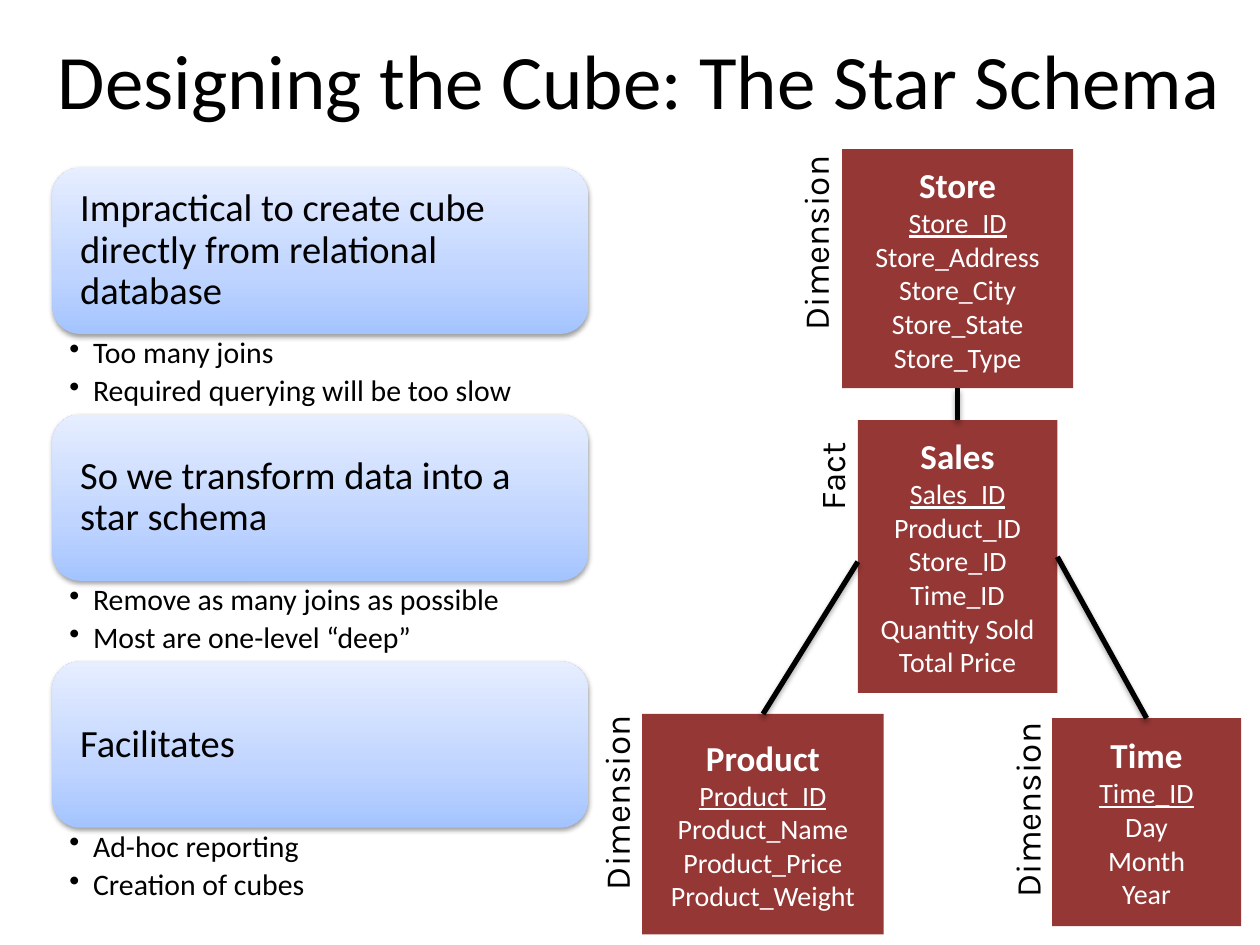
from lxml import etree
from pptx import Presentation
from pptx.dml.color import RGBColor
from pptx.enum.shapes import MSO_CONNECTOR, MSO_SHAPE
from pptx.enum.text import MSO_ANCHOR, PP_ALIGN
from pptx.oxml import parse_xml
from pptx.oxml.ns import nsdecls, qn
from pptx.util import Pt

CENTER, LEFT, RIGHT = PP_ALIGN.CENTER, PP_ALIGN.LEFT, PP_ALIGN.RIGHT
MIDDLE, TOP = MSO_ANCHOR.MIDDLE, MSO_ANCHOR.TOP
RECT, ROUND = MSO_SHAPE.RECTANGLE, MSO_SHAPE.ROUNDED_RECTANGLE
STRAIGHT = MSO_CONNECTOR.STRAIGHT


def rgb(value):
    return RGBColor.from_string(value)


def write(tf, lines, align, anchor, margins, spacing=1, bullet=False):
    tf.word_wrap = True
    tf.vertical_anchor = anchor
    for side, margin in zip(("left", "top", "right", "bottom"), margins):
        setattr(tf, f"margin_{side}", Pt(margin))
    for i, (text, color, fmt) in enumerate(lines):
        p = tf.paragraphs[0] if i == 0 else tf.add_paragraph()
        p.alignment = align
        p.line_spacing = spacing
        if bullet:
            p.space_after = Pt(3.4)
            pPr = p._p.get_or_add_pPr()
            pPr.set("marL", str(Pt(13.5)))
            pPr.set("indent", str(-Pt(13.5)))
            etree.SubElement(pPr, qn("a:buChar")).set("char", "•")
        r = p.add_run()
        r.text = text
        r.font.color.rgb = rgb(color)
        for name, value in fmt.items():
            setattr(r.font, name, value)


TITLE = {"name": "Calibri", "size": Pt(44)}
HEADING = {"name": "Calibri", "size": Pt(22)}
BULLET = {"name": "Calibri", "size": Pt(17)}
TABLE = {"name": "Calibri", "size": Pt(20), "bold": True}
FIELD = {"name": "Calibri", "size": Pt(16)}
KEY = {**FIELD, "underline": True}
LABEL = {"name": "Karla", "size": Pt(20)}
INSETS = (7.2, 3.6, 7.2, 3.6)

prs = Presentation()
prs.slide_width, prs.slide_height = Pt(720), Pt(540)
slide = prs.slides.add_slide(prs.slide_layouts[5])
shadows = []

title = slide.shapes.title
title.left, title.top, title.width, title.height = Pt(23), Pt(0), Pt(685), Pt(90)
write(title.text_frame, [("Designing the Cube: The Star Schema", "000000", TITLE)],
      CENTER, MIDDLE, INSETS)

points = [
    ("Impractical to create cube directly from relational database",
     ["Too many joins", "Required querying will be too slow"]),
    ("So we transform data into a star schema",
     ["Remove as many joins as possible", "Most are one-level “deep”"]),
    ("Facilitates", ["Ad-hoc reporting", "Creation of cubes"]),
]
stops = "".join(
    f'<a:gs pos="{pos}"><a:srgbClr val="{color}"/></a:gs>'
    for pos, color in [(0, "A4C4FF"), (35000, "BFD4FF"), (100000, "E6EEFF")])
for i, (heading, bullets) in enumerate(points):
    top = 95.8 + 141.1 * i
    s = slide.shapes.add_shape(ROUND, Pt(30), Pt(top), Pt(306), Pt(95))
    s.fill.gradient()
    s.fill.gradient_angle = 90
    grad = s._element.spPr.find(qn("a:gradFill"))
    grad.replace(grad.find(qn("a:gsLst")),
                 parse_xml(f'<a:gsLst {nsdecls("a")}>{stops}</a:gsLst>'))
    s.line.fill.background()
    write(s.text_frame, [(heading, "000000", HEADING)], LEFT, MIDDLE, (11.2,) * 4, 0.9)
    shadows.append((s, 1.6, 38))
    s = slide.shapes.add_textbox(Pt(30), Pt(top + 95), Pt(306), Pt(45.5))
    write(s.text_frame, [(b, "000000", BULLET) for b in bullets],
          LEFT, TOP, (9.7, 2.2, 12.2, 2.2), 0.9, True)

tables = [
    ("Sales", 490.2, 240, 114, 156,
     ["Sales_ID", "Product_ID", "Store_ID", "Time_ID", "Quantity Sold", "Total Price"]),
    ("Product", 367, 408, 138, 126,
     ["Product_ID", "Product_Name", "Product_Price", "Product_Weight"]),
    ("Store", 481.2, 85.2, 132, 136.6,
     ["Store_ID", "Store_Address", "Store_City", "Store_State", "Store_Type"]),
    ("Time", 601.2, 410.4, 108, 118.8, ["Time_ID", "Day", "Month", "Year"]),
]
for name, x, y, w, h, (key, *fields) in tables:
    s = slide.shapes.add_shape(RECT, Pt(x), Pt(y), Pt(w), Pt(h))
    s.shadow.inherit = False
    s.fill.solid()
    s.fill.fore_color.rgb = rgb("953735")
    s.line.fill.background()
    lines = [(name, "FFFFFF", TABLE), (key, "FFFFFF", KEY)]
    lines += [(field, "FFFFFF", FIELD) for field in fields]
    write(s.text_frame, lines, CENTER, MIDDLE, INSETS)

joins = [(655.2, 410.4, 604.2, 318.2), (547.2, 221.8, 547.2, 240), (436, 408, 490.2, 321)]
for ends in joins:
    s = slide.shapes.add_connector(STRAIGHT, *map(Pt, ends))
    s.line.color.rgb = rgb("000000")
    s.line.width = Pt(3)
    shadows.append((s, 1.8, 35))

labels = [("Fact", 440.6, 264.2, 69), ("Dimension", 398.9, 133.2, 134),
          ("Dimension", 285.1, 452.9, 134), ("Dimension", 519.8, 457.2, 134)]
for text, x, y, w in labels:
    s = slide.shapes.add_textbox(Pt(x), Pt(y), Pt(w), Pt(31.5))
    s.rotation = 270
    write(s.text_frame, [(text, "000000", LABEL)], RIGHT, TOP, INSETS)

for s, dist, alpha in shadows:
    s._element.spPr.append(parse_xml(
        f'<a:effectLst {nsdecls("a")}><a:outerShdw blurRad="{Pt(3.1)}" dist="{Pt(dist)}" '
        f'dir="5400000" rotWithShape="0"><a:srgbClr val="000000">'
        f'<a:alpha val="{alpha * 1000}"/></a:srgbClr></a:outerShdw></a:effectLst>'))

prs.save("out.pptx")
